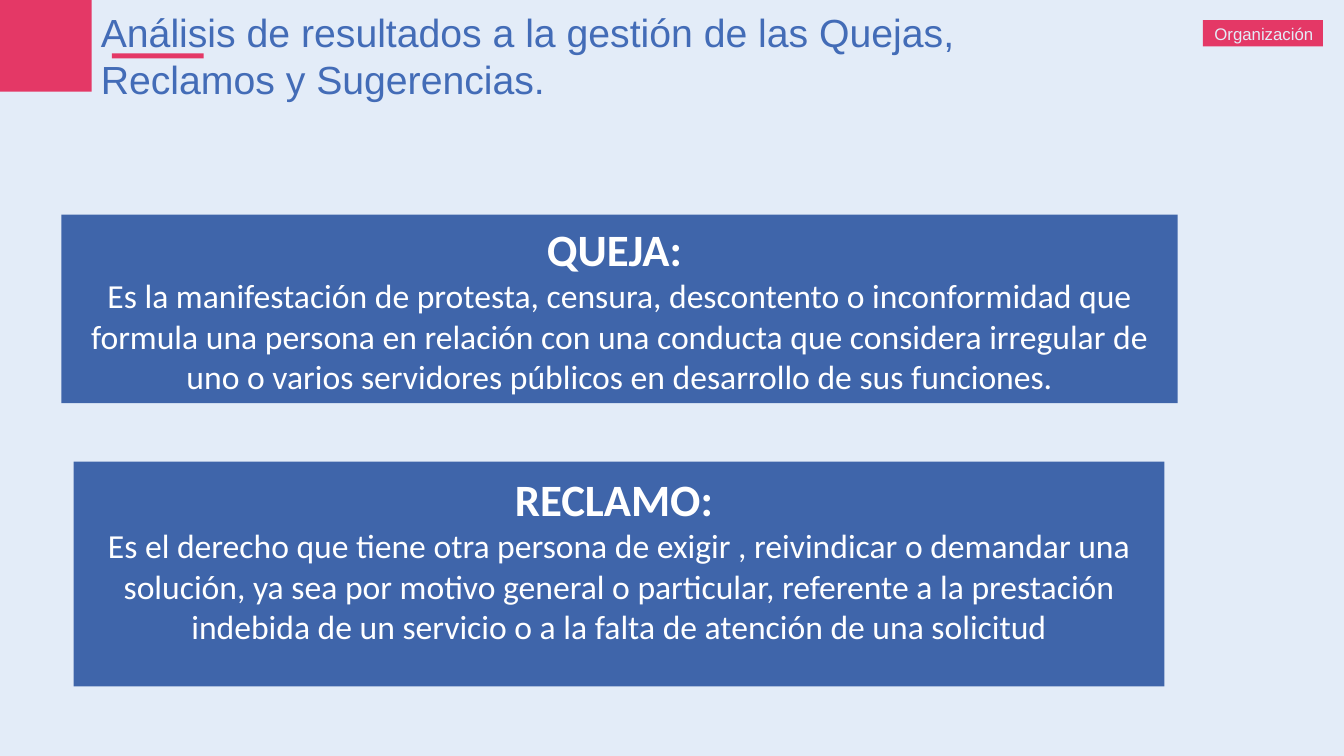
from dataclasses import dataclass

from pptx import Presentation
from pptx.dml.color import RGBColor
from pptx.enum import shapes, text
from pptx.util import Inches, Pt

PINK, BLUE, TITLE_BLUE = "E43866", "3F65AA", "436CB7"
PALE, WHITE = "E3ECF8", "FFFFFF"


@dataclass(frozen=True)
class Box:
    left: float
    top: float
    width: float
    height: float
    color: str


@dataclass(frozen=True)
class Definition:
    box: Box
    term: str
    meaning: str
    bottom_margin: float = 0.05


ACCENTS = [
    Box(0, 0, 0.91, 0.91, PINK),
    Box(1.11, 0.53, 0.91, 0.05, PINK),
    Box(11.93, 0.2, 1.19, 0.26, PINK),
]

DEFINITIONS = [
    Definition(
        Box(0.61, 2.13, 11.07, 1.87, BLUE),
        "QUEJA: ",
        "Es la manifestación de protesta, censura, descontento o inconformidad "
        "que formula una persona en relación con una conducta que considera "
        "irregular de uno o varios servidores públicos en desarrollo de sus "
        "funciones.",
    ),
    Definition(
        Box(0.73, 4.58, 10.82, 2.23, BLUE),
        "RECLAMO: ",
        "Es el derecho que tiene otra persona de exigir , reivindicar o demandar "
        "una solución, ya sea por motivo general o particular, referente a la "
        "prestación indebida de un servicio o a la falta de atención de una "
        "solicitud",
        bottom_margin=0.35,
    ),
]


def paint(color_format, color: str) -> None:
    color_format.rgb = RGBColor.from_string(color)


def style(paragraph, size: float, font: str, color: str,
          align=text.PP_ALIGN.CENTER, bold: bool = False) -> None:
    paragraph.alignment = align
    paragraph.font.size = Pt(size)
    paragraph.font.name = font
    paragraph.font.bold = bold
    paint(paragraph.font.color, color)


def add_box(slide, box: Box):
    rectangle = slide.shapes.add_shape(
        shapes.MSO_SHAPE.RECTANGLE, Inches(box.left), Inches(box.top),
        Inches(box.width), Inches(box.height))
    rectangle.shadow.inherit = False
    rectangle.fill.solid()
    paint(rectangle.fill.fore_color, box.color)
    rectangle.line.fill.background()
    return rectangle


def add_definition(slide, definition: Definition) -> None:
    frame = add_box(slide, definition.box).text_frame
    frame.word_wrap = True
    frame.vertical_anchor = text.MSO_ANCHOR.MIDDLE
    frame.margin_bottom = Inches(definition.bottom_margin)
    term = frame.paragraphs[0]
    term.text = definition.term
    style(term, 32, "Calibri", WHITE, bold=True)
    meaning = frame.add_paragraph()
    meaning.text = definition.meaning
    style(meaning, 24, "Calibri", WHITE)


def set_title(slide, wording: str) -> None:
    title = slide.shapes.title
    title.left, title.top = Inches(0.9), Inches(0.03)
    title.width, title.height = Inches(9.32), Inches(1.04)
    frame = title.text_frame
    frame.text = wording
    frame.word_wrap = True
    frame.auto_size = text.MSO_AUTO_SIZE.NONE
    frame.vertical_anchor = text.MSO_ANCHOR.TOP
    style(frame.paragraphs[0], 28, "Arial", TITLE_BLUE, text.PP_ALIGN.LEFT)


def add_tag(slide, wording: str) -> None:
    tag = slide.shapes.add_textbox(
        Inches(11.89), Inches(0.19), Inches(1.29), Inches(0.3))
    tag.text_frame.text = wording
    tag.text_frame.word_wrap = True
    style(tag.text_frame.paragraphs[0], 12, "Arial", PALE)


def main() -> None:
    deck = Presentation()
    deck.slide_width, deck.slide_height = Inches(13.33), Inches(7.5)
    slide = deck.slides.add_slide(deck.slide_layouts.get_by_name("Title Only"))
    slide.background.fill.solid()
    paint(slide.background.fill.fore_color, PALE)

    set_title(slide, "Análisis de resultados a la gestión de las Quejas, "
                     "Reclamos y Sugerencias.")
    for accent in ACCENTS:
        add_box(slide, accent)
    add_tag(slide, "Organización")
    for definition in DEFINITIONS:
        add_definition(slide, definition)

    deck.save("out.pptx")


if __name__ == "__main__":
    main()
